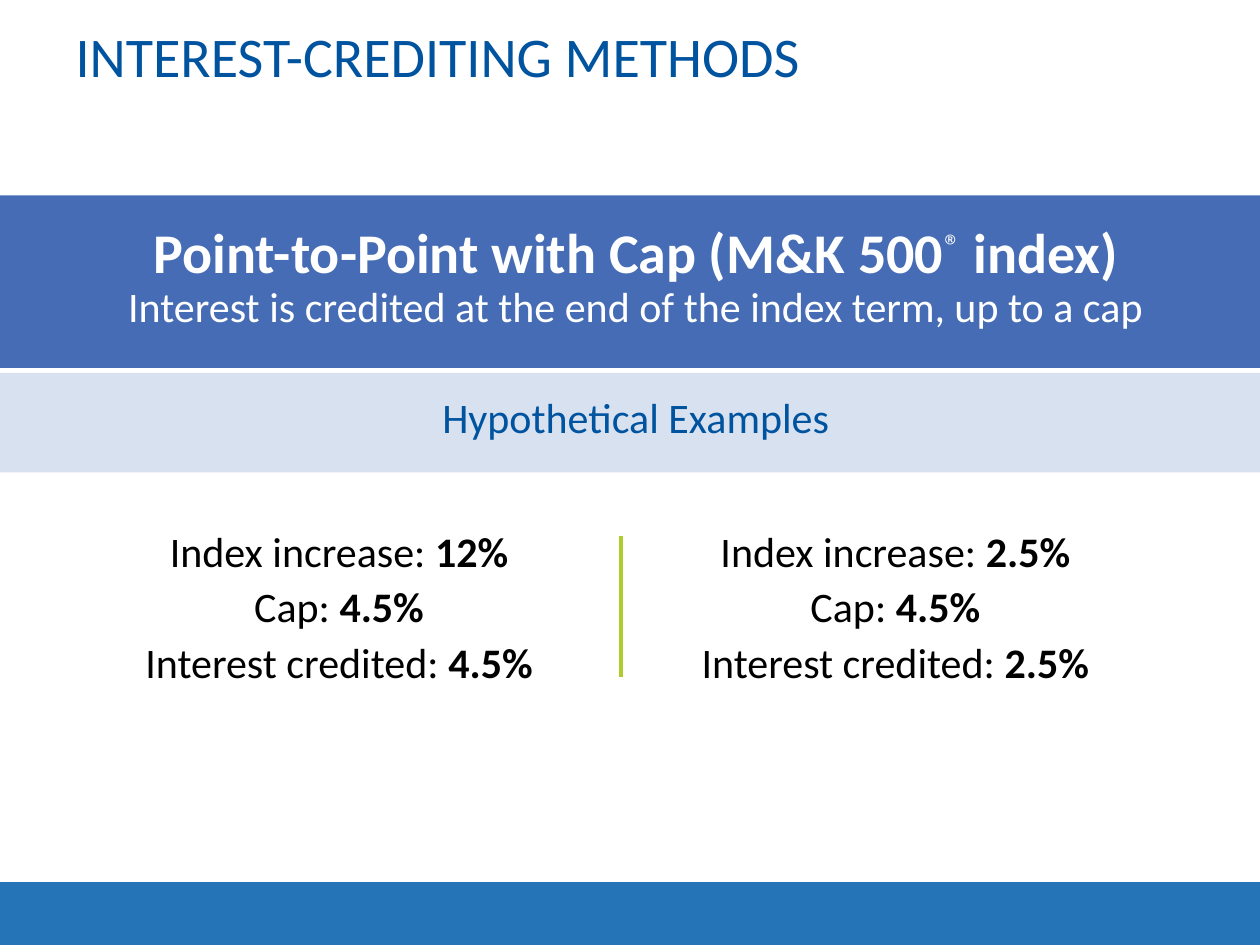
from lxml import etree
from pptx import Presentation
from pptx import util as u
from pptx.dml.color import RGBColor
from pptx.enum import shapes, text
from pptx.oxml.ns import qn

BLUE = RGBColor(0x00, 0x53, 0x9F)
DEEP = RGBColor(0x00, 0x5E, 0xAD)
BAND = RGBColor(0x45, 0x6C, 0xB4)
PALE = RGBColor(0xD8, 0xE1, 0xF0)
LIME = RGBColor(0xB0, 0xD2, 0x3F)
RULE = RGBColor(0xAF, 0xCC, 0x2D)
MIST = RGBColor(0xF2, 0xF2, 0xF2)
WHITE = RGBColor(0xFF, 0xFF, 0xFF)
BLACK = RGBColor(0, 0, 0)

W, H = 10, 7.5
FONT = "Calibri"
BIG, BODY = 32, 24
TITLE = "INTEREST-CREDITING METHODS"
PRODUCT = ("Point-to-Point with Cap (M&K 500", "®", " index)")
SUMMARY = "Interest is credited at the end of the index term, up to a cap"
SUBHEAD = "Hypothetical Examples"
LABELS = ("Index increase: ", "Cap: ", "Interest credited: ")
EXAMPLES = [
    (0.42, 4.58, ("12%", "4.5%", "4.5%")),
    (5, 4.25, ("2.5%", "4.5%", "2.5%")),
]
BANDS = [(2.96, 0.79, PALE), (1.55, 1.37, BAND)]
WAVES = [
    ([(0, 6.77), (W, 6.81), (W, 7.29), (0, 7.29)], LIME, None),
    ([(0, 7.03), (W, 6.74), (W, H), (0, H)], DEEP, None),
    ([(0, 7.21), (W, 7.38), (W, H), (0, H)], MIST, 15),
]
ROW_TOP, ROW_H = 4.1, 1.42
RULE_X, RULE_INSET = 4.93, 0.15


def put(obj, values):
    for name, value in values.items():
        setattr(obj, name, value)


def paint(s, color, alpha=None):
    s.shadow.inherit = False
    s.fill.solid()
    s.fill.fore_color.rgb = color
    s.line.fill.background()
    if alpha:
        clr = s.fill._xPr.find(qn("a:solidFill"))[0]
        etree.SubElement(clr, qn("a:alpha"), val=str(alpha * 1000))


def add_run(p, words, size, color, bold=False):
    r = p.add_run()
    r.text = words
    put(r.font, dict(name=FONT, size=u.Pt(size), bold=bold))
    r.font.color.rgb = color
    return r


def add_box(sp, x, y, w, h, left=0.06, anchor=text.MSO_ANCHOR.MIDDLE):
    tf = sp.add_textbox(*map(u.Inches, (x, y, w, h))).text_frame
    put(tf, dict(word_wrap=True, vertical_anchor=anchor,
                 margin_left=u.Inches(left), margin_top=u.Inches(0.1),
                 margin_right=u.Inches(0.1), margin_bottom=u.Inches(0.05)))
    return tf


def add_line(tf, i=0):
    p = tf.add_paragraph() if i else tf.paragraphs[0]
    put(p, dict(alignment=text.PP_ALIGN.CENTER, line_spacing=0.9,
                space_before=u.Pt(6 if i else 0)))
    return p


prs = Presentation()
put(prs, dict(slide_width=u.Inches(W), slide_height=u.Inches(H)))
s = prs.slides.add_slide(prs.slide_layouts[5])
sp = s.shapes

for points, color, alpha in WAVES:
    builder = sp.build_freeform(*points[0], scale=u.Inches(1))
    builder.add_line_segments(points[1:], close=True)
    paint(builder.convert_to_shape(), color, alpha)

for top, height, color in BANDS:
    paint(sp.add_shape(shapes.MSO_SHAPE.RECTANGLE, 0, u.Inches(top),
                       u.Inches(W), u.Inches(height)), color)

title = sp.title
put(title, dict(left=u.Inches(0.5), top=u.Inches(0.22),
                width=u.Inches(9), height=u.Inches(1.06)))
put(title.text_frame, dict(vertical_anchor=text.MSO_ANCHOR.TOP, word_wrap=True))
p = title.text_frame.paragraphs[0]
put(p, dict(alignment=text.PP_ALIGN.LEFT, line_spacing=0.8))
add_run(p, TITLE, BIG, BLUE)

p = add_line(add_box(sp, 0, 1.69, W, 1.22, 0.19, text.MSO_ANCHOR.TOP))
for words in PRODUCT:
    mark = words == "®"
    r = add_run(p, words, BIG, WHITE, not mark)
    if mark:
        r.font._element.set("baseline", "30000")
p.add_line_break()
add_run(p, SUMMARY, BODY, WHITE)

p = add_line(add_box(sp, 0.5, 3.06, 9, 0.49, 0.19))
add_run(p, SUBHEAD, BODY, BLUE)

for x, width, values in EXAMPLES:
    tf = add_box(sp, x, ROW_TOP, width, ROW_H)
    for i, (label, value) in enumerate(zip(LABELS, values)):
        p = add_line(tf, i)
        add_run(p, label, BODY, BLACK)
        add_run(p, value, BODY, BLACK, True)

rule = sp.add_connector(shapes.MSO_CONNECTOR.STRAIGHT, *map(u.Inches, (
    RULE_X, ROW_TOP + RULE_INSET, RULE_X, ROW_TOP + ROW_H - RULE_INSET)))
rule.line.color.rgb = RULE
rule.line.width = u.Pt(2.25)
etree.SubElement(rule._element.spPr, qn("a:effectLst"))

prs.save("out.pptx")
